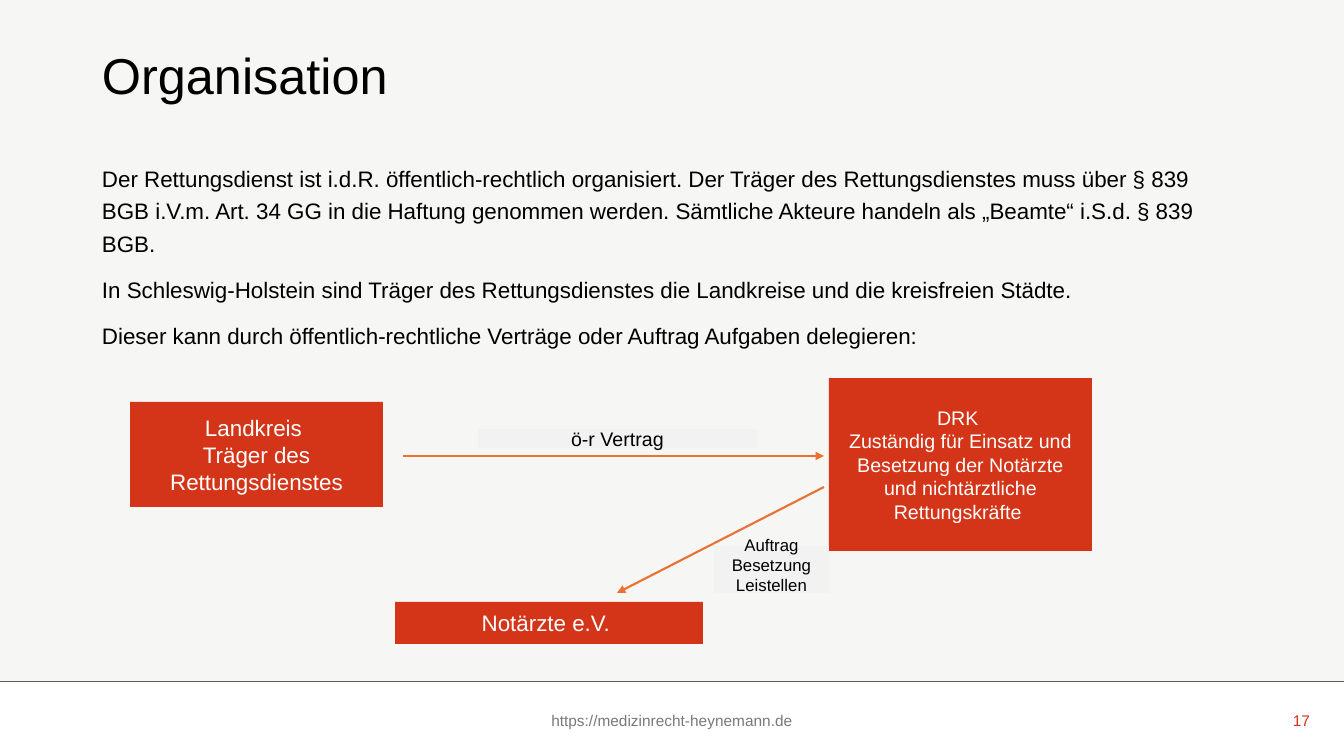
from lxml import etree
from pptx import Presentation
from pptx import util as u
from pptx.dml.color import RGBColor
from pptx.enum import shapes, text
from pptx.oxml.ns import qn

PX = 9071
RED, ORANGE, GREY, BLACK, WHITE = "D43417", "E97132", "F2F2F2", "000000", "FFFFFF"
CENTER, RIGHT = text.PP_ALIGN.CENTER, text.PP_ALIGN.RIGHT
MIDDLE = text.MSO_ANCHOR.MIDDLE


def px(*values):
    """Turn pixel lengths into EMU."""
    return [u.Emu(v * PX) for v in values]


def rgb(code):
    """Turn a hex string into a colour."""
    return RGBColor.from_string(code)


def write(sp, lines, size=16, color=BLACK, align=None, anchor=text.MSO_ANCHOR.TOP,
          spacing=None, before=0, inset=(9, 5, 9, 5)):
    """Fill a shape with formatted paragraphs."""
    tf = sp.text_frame
    tf.word_wrap = True
    tf.vertical_anchor = anchor
    tf.margin_left, tf.margin_top, tf.margin_right, tf.margin_bottom = px(*inset)
    for i, line in enumerate(lines):
        p = tf.add_paragraph() if i else tf.paragraphs[0]
        p.alignment = align
        if spacing:
            p.line_spacing = spacing
        if i:
            p.space_before = u.Pt(before)
        r = p.add_run()
        r.text = line
        r.font.size = u.Pt(size)
        r.font.name = "Arial"
        r.font.color.rgb = rgb(color)


def add_text(s, box, lines, **fmt):
    """Place a text box."""
    write(s.shapes.add_textbox(*px(*box)), lines, **fmt)


def add_box(s, box, fill, lines=(), outline=None, **fmt):
    """Place a filled rectangle with centred text."""
    sp = s.shapes.add_shape(shapes.MSO_SHAPE.RECTANGLE, *px(*box))
    sp.shadow.inherit = False
    sp.fill.solid()
    sp.fill.fore_color.rgb = rgb(fill)
    if outline:
        sp.line.color.rgb = rgb(outline)
        sp.line.width = u.Pt(1.5)
    else:
        sp.line.fill.background()
    write(sp, lines, align=CENTER, anchor=MIDDLE, **fmt)


def add_line(s, ends, color, width, arrow=False):
    """Draw a straight line, with an arrowhead at its end if asked."""
    c = s.shapes.add_connector(shapes.MSO_CONNECTOR.STRAIGHT, *px(*ends))
    c.line.color.rgb = rgb(color)
    c.line.width = u.Pt(width)
    if arrow:
        etree.SubElement(c.line._get_or_add_ln(), qn("a:tailEnd"), type="triangle")
    etree.SubElement(c._element.spPr, qn("a:effectLst"))


def add_frame(s, x, y, w, h):
    """Draw the background panel and the footer."""
    panel = h - 75
    add_box(s, (x, y, w, panel), "F6F6F4")
    add_line(s, (x, y + panel, x + w, y + panel), "585E57", 0.5)
    footer = y + h - 56
    add_text(s, (x + 395, footer, 554, 40), ["https://medizinrecht-heynemann.de"],
             size=11, color="797979", align=CENTER, anchor=MIDDLE)
    add_text(s, (x + 1251, footer, 68, 40), ["17"],
             size=11, color=RED, align=RIGHT, anchor=MIDDLE)


def add_content(s, x, y, w, h):
    """Write the title and the body text."""
    add_text(s, (x, y, w, 117), ["Organisation"], size=36, spacing=0.9)
    add_text(s, (x, y + 109, w, h - 109), [
        "Der Rettungsdienst ist i.d.R. öffentlich-rechtlich organisiert. Der Träger des "
        "Rettungsdienstes muss über § 839 BGB i.V.m. Art. 34 GG in die Haftung genommen "
        "werden. Sämtliche Akteure handeln als „Beamte“ i.S.d. § 839 BGB.",
        "In Schleswig-Holstein sind Träger des Rettungsdienstes die Landkreise und die "
        "kreisfreien Städte.",
        "Dieser kann durch öffentlich-rechtliche Verträge oder Auftrag Aufgaben delegieren:",
    ], spacing=1.2, before=10)


def add_diagram(s, x, y, w, h):
    """Draw the three parties and the contracts between them."""
    right = x + w
    add_box(s, (x, y + 24, 253, 105), RED,
            ["Landkreis ", "Träger des Rettungsdienstes"], color=WHITE)
    add_box(s, (right - 263, y, 263, 173), RED,
            ["DRK ", "Zuständig für Einsatz und Besetzung der Notärzte "
             "und nichtärztliche Rettungskräfte "],
            size=14, color=WHITE, inset=(14, 5, 14, 5))
    add_box(s, (x + 265, y + h - 42, 308, 42), RED, ["Notärzte e.V. "], color=WHITE)
    start = right - 268
    add_line(s, (x + 273, y + 78, start, y + 78), ORANGE, 1.5, arrow=True)
    add_box(s, (x + 349, y + 52, 277, 17), GREY, ["ö-r Vertrag"], outline=GREY, size=14)
    add_line(s, (start, y + 109, x + 487, y + 215), ORANGE, 1.5, arrow=True)
    add_box(s, (x + 584, y + 168, 115, 47), GREY,
            ["Auftrag", "Besetzung Leistellen"], size=12, inset=(9, 0, 9, 9))


def main():
    """Build and save the slide."""
    prs = Presentation()
    prs.slide_width, prs.slide_height = px(1344, 756)
    s = prs.slides.add_slide(prs.slide_layouts[6])
    add_frame(s, 0, 0, 1344, 756)
    add_content(s, 93, 46, 1130, 634)
    add_diagram(s, 130, 378, 962, 266)
    prs.save("out.pptx")


if __name__ == "__main__":
    main()
